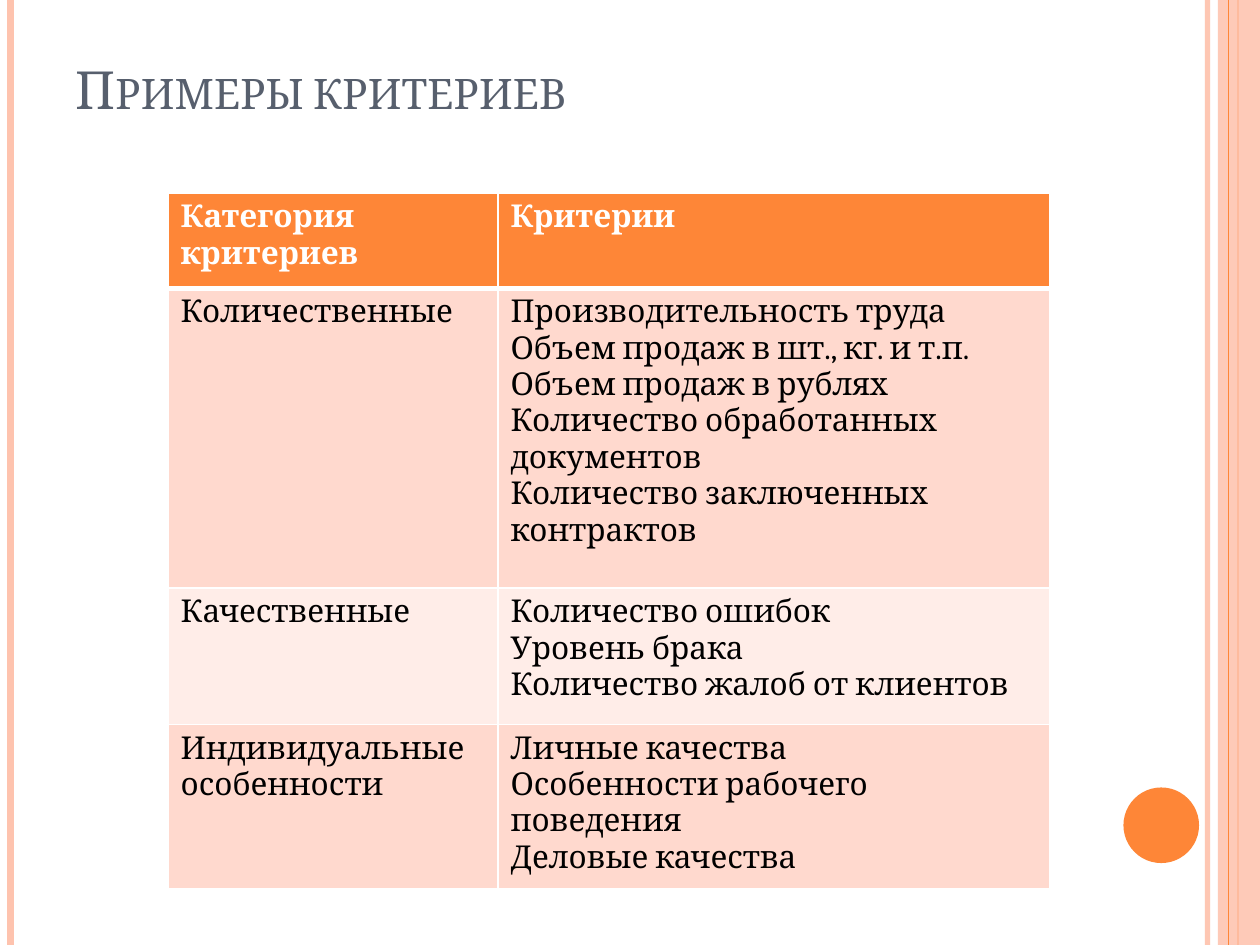
from typing import NamedTuple

from lxml import etree
from pptx import Presentation
from pptx.dml.color import RGBColor
from pptx.enum import shapes, text
from pptx.oxml import ns
from pptx.util import Pt

ORANGE = RGBColor(0xFE, 0x86, 0x37)
PEACH = RGBColor(0xFE, 0xC3, 0xAE)
SLATE = RGBColor(0x57, 0x5F, 0x6D)
BAND_DARK = RGBColor(0xFF, 0xD9, 0xCE)
BAND_LIGHT = RGBColor(0xFF, 0xED, 0xE8)
WHITE = RGBColor(0xFF, 0xFF, 0xFF)
BLACK = RGBColor(0, 0, 0)
FONT = "Cambria"
PAGE_WIDTH, PAGE_HEIGHT = 720, 540


class Stripe(NamedTuple):
    x: float
    width: float
    color: RGBColor
    opacity: int = 100


class Row(NamedTuple):
    height: float
    category: str
    criteria: list[str]
    fill: RGBColor
    color: RGBColor = BLACK
    bold: bool = False
    top: float = 1
    bottom: float = 1


STRIPES_BEHIND = [
    Stripe(690, 3, PEACH, 93),
    Stripe(6, 4.5, PEACH),
    Stripe(707.5, 1.5, ORANGE),
]
STRIPE_FRONT = Stripe(702, 0.75, ORANGE)
COLUMN_WIDTHS = [188.6, 315.4]
ROWS = [
    Row(54.4, "Категория критериев", ["Критерии"], ORANGE, WHITE, True, bottom=3),
    Row(171.4, "Количественные", [
        "Производительность труда",
        "Объем продаж в шт., кг. и т.п.",
        "Объем продаж в рублях",
        "Количество обработанных документов",
        "Количество заключенных контрактов",
    ], BAND_DARK, top=3),
    Row(78, "Качественные", [
        "Количество ошибок",
        "Уровень брака",
        "Количество жалоб от клиентов",
    ], BAND_LIGHT),
    Row(78, "Индивидуальные особенности", [
        "Личные качества",
        "Особенности рабочего поведения",
        "Деловые качества",
    ], BAND_DARK),
]


def set_opacity(element, percent: int) -> None:
    color = next(element.iter(ns.qn("a:srgbClr")))
    etree.SubElement(color, ns.qn("a:alpha"), val=str(percent * 1000))


def draw_stripe(page, stripe: Stripe) -> None:
    line = page.shapes.add_connector(
        shapes.MSO_CONNECTOR.STRAIGHT,
        Pt(stripe.x), Pt(0), Pt(stripe.x), Pt(PAGE_HEIGHT))
    line.line.color.rgb = stripe.color
    line.line.width = Pt(stripe.width)
    properties = line.element.spPr
    if stripe.opacity < 100:
        set_opacity(properties, stripe.opacity)
    etree.SubElement(properties, ns.qn("a:effectLst"))


def draw_shape(page, kind, left: float, top: float, width: float,
               height: float, color: RGBColor):
    shape = page.shapes.add_shape(kind, Pt(left), Pt(top), Pt(width), Pt(height))
    shape.shadow.inherit = False
    shape.fill.solid()
    shape.fill.fore_color.rgb = color
    shape.line.fill.background()
    return shape


def add_span(para, words: str, size: float, color: RGBColor, bold: bool = False):
    span = para.add_run()
    span.text = words
    span.font.name = FONT
    span.font.size = Pt(size)
    span.font.bold = bold
    span.font.color.rgb = color
    return span


def draw_title(page, words: str) -> None:
    box = page.shapes.add_textbox(Pt(36), Pt(21.6), Pt(588), Pt(50.4))
    frame = box.text_frame
    frame.word_wrap = True
    frame.vertical_anchor = text.MSO_ANCHOR.BOTTOM
    span = add_span(frame.paragraphs[0], words, 30, SLATE)
    span.font._element.set("cap", "small")


def set_borders(cell, top: float, bottom: float) -> None:
    properties = cell._tc.get_or_add_tcPr()
    sides = {"lnL": 1, "lnR": 1, "lnT": top, "lnB": bottom}
    for side, width in sides.items():
        line = etree.SubElement(properties, ns.qn(f"a:{side}"), w=str(Pt(width)))
        fill = etree.SubElement(line, ns.qn("a:solidFill"))
        etree.SubElement(fill, ns.qn("a:srgbClr"), val=str(WHITE))


def fill_cell(cell, lines: list[str], row: Row) -> None:
    set_borders(cell, row.top, row.bottom)
    cell.fill.solid()
    cell.fill.fore_color.rgb = row.fill
    frame = cell.text_frame
    for index, words in enumerate(lines):
        para = frame.add_paragraph() if index else frame.paragraphs[0]
        add_span(para, words, 18, row.color, row.bold)


def draw_table(page, rows: list[Row]) -> None:
    table = page.shapes.add_table(
        len(rows), len(COLUMN_WIDTHS), Pt(96), Pt(110.3),
        Pt(sum(COLUMN_WIDTHS)), Pt(sum(row.height for row in rows))).table
    for column, width in zip(table.columns, COLUMN_WIDTHS):
        column.width = Pt(width)
    for index, row in enumerate(rows):
        table.rows[index].height = Pt(row.height)
        fill_cell(table.cell(index, 0), [row.category], row)
        fill_cell(table.cell(index, 1), row.criteria, row)


def main() -> None:
    deck = Presentation()
    deck.slide_width, deck.slide_height = Pt(PAGE_WIDTH), Pt(PAGE_HEIGHT)
    page = deck.slides.add_slide(deck.slide_layouts[6])

    # Side stripes and the corner disc
    for stripe in STRIPES_BEHIND:
        draw_stripe(page, stripe)
    band = draw_shape(page, shapes.MSO_SHAPE.RECTANGLE,
                      696, 0, 24, PAGE_HEIGHT, PEACH)
    set_opacity(band.element.spPr, 87)
    draw_stripe(page, STRIPE_FRONT)
    draw_shape(page, shapes.MSO_SHAPE.OVAL, 642, 450, 43.2, 43.2, ORANGE)

    # Title and table of criteria
    draw_title(page, "Примеры критериев")
    draw_table(page, ROWS)

    deck.save("out.pptx")


if __name__ == "__main__":
    main()
